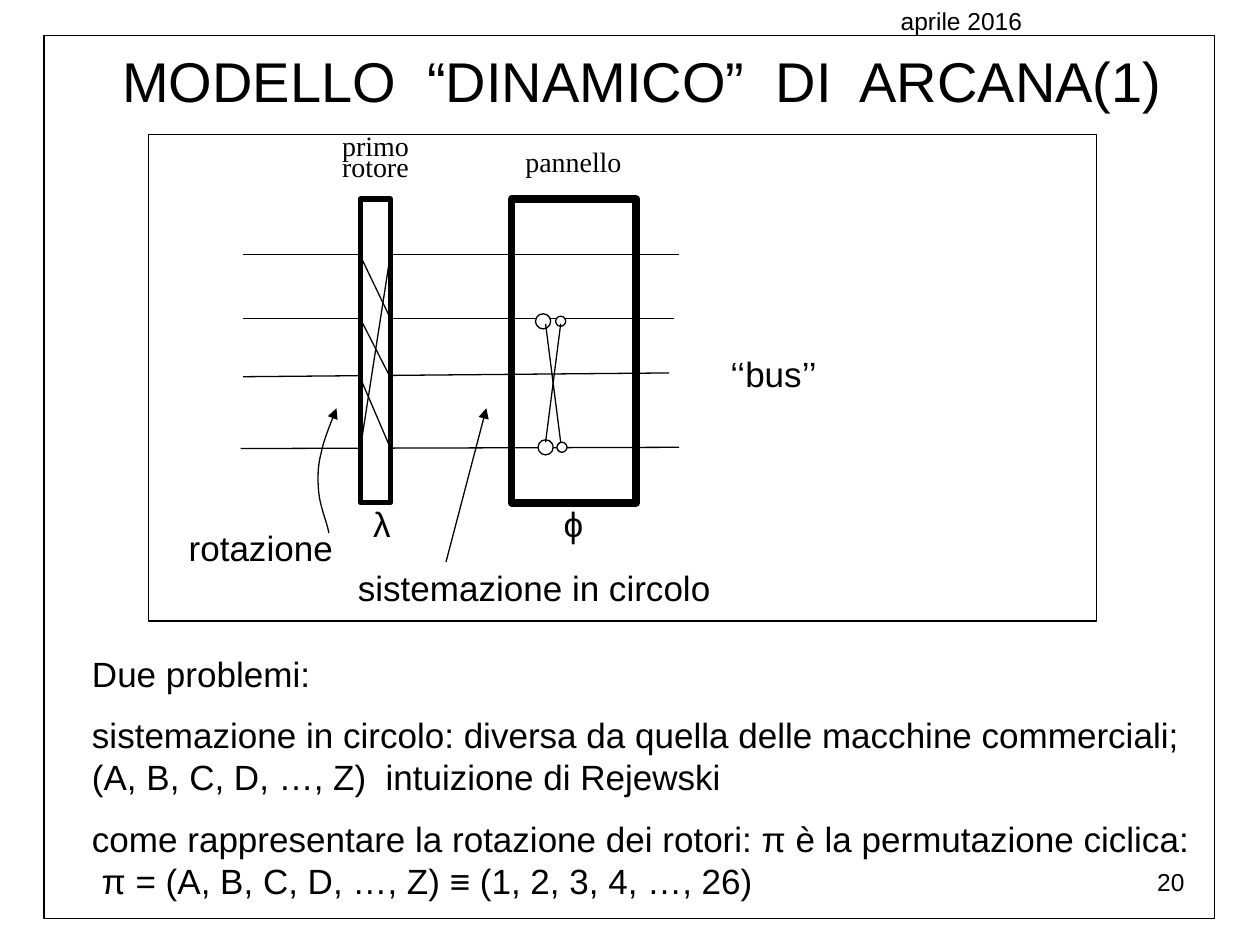
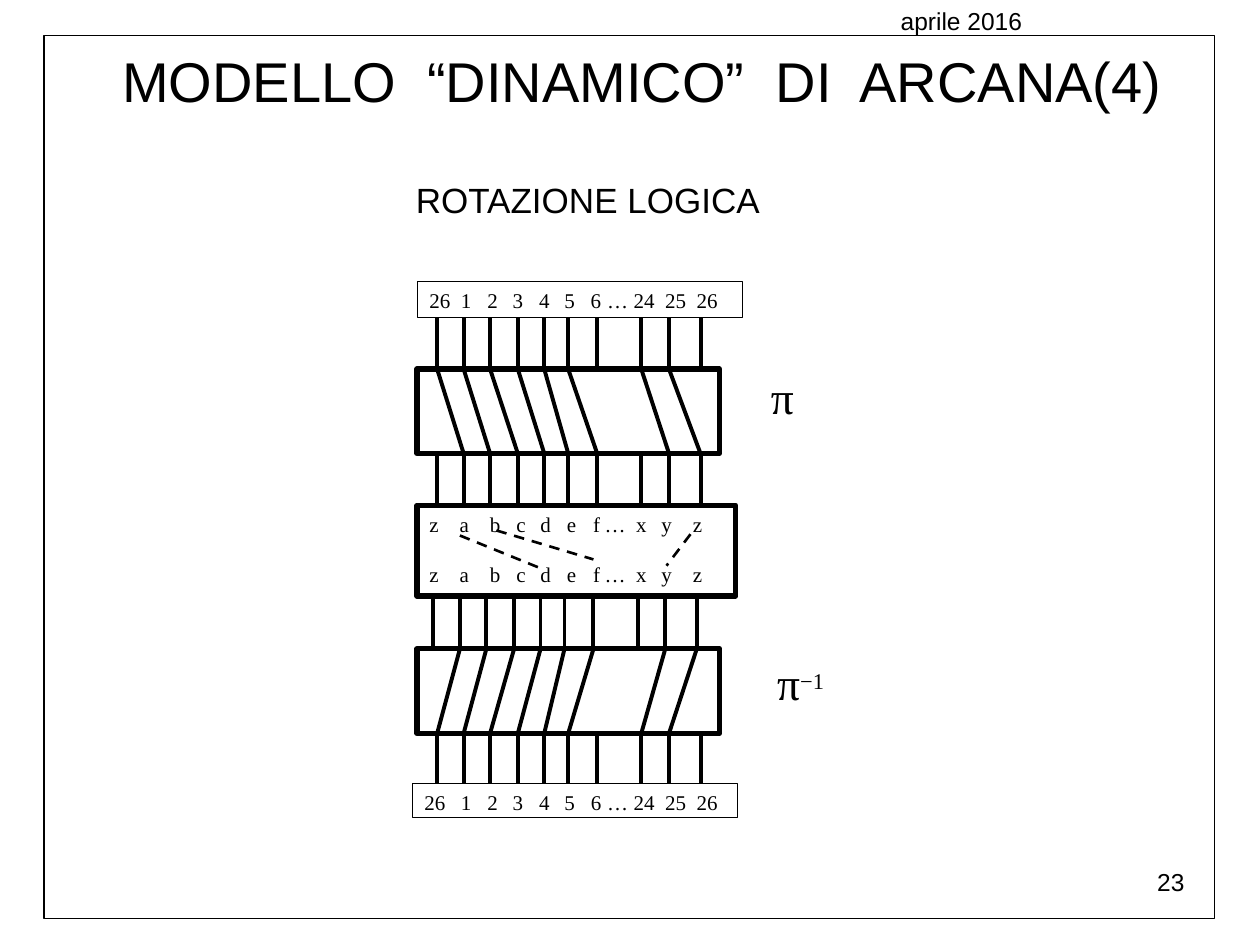
"""Build two slides on the dynamic model of the Arcana machine."""
from dataclasses import dataclass
from itertools import pairwise

from lxml.etree import SubElement
from pptx import Presentation
from pptx.dml.color import RGBColor
from pptx.enum.dml import MSO_LINE
from pptx.enum.shapes import MSO_CONNECTOR, MSO_SHAPE
from pptx.enum.text import MSO_ANCHOR, MSO_AUTO_SIZE, PP_ALIGN
from pptx.oxml.ns import qn
from pptx.shapes.autoshape import Shape
from pptx.shapes.connector import Connector
from pptx.slide import Slide
from pptx.util import Emu, Pt

BLACK = RGBColor(0, 0, 0)
WHITE = RGBColor(255, 255, 255)
SANS = "Arial"
SERIF = "Times New Roman"
PX = 9144

Point = tuple[int, int]


@dataclass(frozen=True)
class Area:
    left: int
    top: int
    width: int
    height: int

    def emu(self) -> tuple[Emu, Emu, Emu, Emu]:
        return px(self.left), px(self.top), px(self.width), px(self.height)

    def side_middles(self) -> list[Point]:
        """Middles of the top, left, bottom and right sides, in connection order."""
        middle_x = self.left + self.width // 2
        middle_y = self.top + self.height // 2
        return [(middle_x, self.top), (self.left, middle_y),
                (middle_x, self.top + self.height), (self.left + self.width, middle_y)]


@dataclass(frozen=True)
class Style:
    size: int = 20
    font: str = SANS
    align: PP_ALIGN = PP_ALIGN.LEFT
    inset: bool = True
    spacing: float = 1.0
    before: int = 0


@dataclass(frozen=True)
class Label:
    text: str
    area: Area
    style: Style
    filled: bool = False


@dataclass(frozen=True)
class Box:
    area: Area
    width: float
    fill: RGBColor | None = None
    kind: MSO_SHAPE = MSO_SHAPE.RECTANGLE


FRAME = Box(Area(35, 28, 929, 701), 0.75)
TITLE_AREA = Area(55, 32, 910, 63)
TITLE = Style(32, align=PP_ALIGN.CENTER)
BODY = Style(before=11)
DATE = Label("aprile 2016", Area(705, 0, 220, 69), Style(14))
NUMBER_AREA = Area(717, 683, 233, 52)
NUMBER = Style(14, align=PP_ALIGN.RIGHT)

TIGHT = Style(inset=False)
CENTERED = Style(inset=False, align=PP_ALIGN.CENTER)
ROTOR = Box(Area(286, 158, 24, 241), 3, WHITE)
PANEL = Box(Area(406, 158, 99, 241), 4.5)
DIAGRAM = Box(Area(118, 107, 752, 386), 0.75)
BUS_WIRES = [((193, 202), (539, 202)), ((193, 299), (531, 296)),
             ((191, 356), (539, 355)), ((193, 253), (535, 253))]
PLUGS = [Area(427, 349, 12, 12), Area(442, 351, 8, 8),
         Area(425, 249, 12, 12), Area(441, 251, 8, 8)]
ROTOR_LINKS = [(203, 253), (253, 300), (300, 356), (356, 201)]
PLUG_LINKS = [((445, 257), (433, 351)), ((433, 257), (445, 351))]
DIAGRAM_LABELS = [
    Label("primo\nrotore", Area(253, 110, 90, 39),
          Style(16, SERIF, PP_ALIGN.CENTER, False, 0.65), True),
    Label("pannello", Area(417, 115, 80, 28), Style(16, SERIF, inset=False), True),
    Label("ϕ", Area(439, 399, 32, 33), CENTERED),
    Label("λ", Area(287, 399, 32, 33), CENTERED),
    Label("sistemazione in circolo", Area(284, 450, 288, 33), TIGHT),
    Label("rotazione", Area(134, 418, 146, 33), CENTERED),
    Label("‘‘bus’’", Area(541, 280, 146, 33), CENTERED),
]
ROTATION_CURVE = [(267, 324), (265, 330), (257, 348), (255, 359), (252, 370),
                  (252, 381), (253, 391), (254, 402), (260, 416), (261, 423)]
CURVE_STEPS = 10
PROBLEMS = """Due problemi:
sistemazione in circolo: diversa da quella delle macchine commerciali; (A, B, C, D, …, Z)  intuizione di Rejewski
come rappresentare la rotazione dei rotori: π è la permutazione ciclica:
 π = (A, B, C, D, …, Z) ≡ (1, 2, 3, 4, …, 26)"""

WIRE_COLUMNS = [347, 368, 389, 411, 432, 451, 474, 509, 531, 556]
ELLIPSIS_GAP = (474, 509)
SHIFT_BOX = Box(Area(331, 293, 240, 67), 3)
LETTER_BOX = Box(Area(331, 401, 253, 72), 3)
INVERSE_BOX = Box(Area(331, 515, 240, 67), 3)
LETTER_SHIFT = -3
WIRE_ROWS = [(252, 293, 0), (360, 401, 0), (473, 515, LETTER_SHIFT), (582, 622, 0)]
NUMBERS = "26 1 2 3 4 5 6 … 24 25 26".split()
LETTERS = "z a b c d e f … x y z".split()
NUMBER_TABS = [366, 387, 407, 428, 448, 469, 482, 503, 528, 553]
LETTER_TABS = [365, 389, 410, 429, 450, 471, 480, 505, 525, 550]
NUMBER_BOXES = [Box(Area(331, 223, 258, 29), 0.5), Box(Area(327, 622, 258, 27), 0.5)]
LETTER_LINKS = [((365, 425), (429, 451)), ((394, 421), (471, 444)), ((548, 424), (529, 449))]
ROW = Style(12, SERIF)
LETTER_ROWS = Style(12, SERIF, before=14)
SYMBOL = Style(26, SERIF)


def px(length: float) -> Emu:
    return Emu(round(length * PX))


def write(shape: Shape, text: str, style: Style) -> None:
    """Fill a shape with text in one style."""
    frame = shape.text_frame
    frame.text = text
    frame.word_wrap = True
    frame.auto_size = MSO_AUTO_SIZE.NONE
    frame.vertical_anchor = MSO_ANCHOR.TOP
    frame.margin_left = frame.margin_right = px(10 if style.inset else 0)
    frame.margin_top = frame.margin_bottom = px(5 if style.inset else 0)
    for index, para in enumerate(frame.paragraphs):
        para.alignment = style.align
        para.line_spacing = style.spacing
        para.space_before = Pt(style.before if index else 0)
        for span in para.runs:
            span.font.size = Pt(style.size)
            span.font.name = style.font
            span.font.color.rgb = BLACK


def add_label(page: Slide, label: Label) -> Shape:
    shape = page.shapes.add_textbox(*label.area.emu())
    if label.filled:
        shape.fill.solid()
        shape.fill.fore_color.rgb = WHITE
    write(shape, label.text, label.style)
    return shape


def outline(shape: Shape, width: float, fill: RGBColor | None) -> None:
    shape.shadow.inherit = False
    shape.line.color.rgb = BLACK
    shape.line.width = Pt(width)
    if fill is None:
        shape.fill.background()
    else:
        shape.fill.solid()
        shape.fill.fore_color.rgb = fill


def add_box(page: Slide, box: Box) -> Shape:
    shape = page.shapes.add_shape(box.kind, *box.area.emu())
    outline(shape, box.width, box.fill)
    return shape


def add_line(page: Slide, start: Point, end: Point, width: float = 0.75,
             joined: tuple[tuple[Box, Shape], ...] = ()) -> Connector:
    """Draw a line and join it to any box whose side middle it touches."""
    line = page.shapes.add_connector(
        MSO_CONNECTOR.STRAIGHT, *map(px, start), *map(px, end))
    line.line.color.rgb = BLACK
    line.line.width = Pt(width)
    SubElement(line._element.spPr, qn("a:effectLst"))
    for box, shape in joined:
        for side, middle in enumerate(box.area.side_middles()):
            if middle == start:
                line.begin_connect(shape, side)
            if middle == end:
                line.end_connect(shape, side)
    return line


def add_head(shape: Shape | Connector) -> None:
    SubElement(shape.line._get_or_add_ln(), qn("a:headEnd"), type="triangle")


def add_curve(page: Slide, controls: list[Point]) -> Shape:
    """Draw chained cubic curves through every third control point."""
    points = []
    for first in range(0, len(controls) - 1, 3):
        a, b, c, d = controls[first:first + 4]
        for step in range(1, CURVE_STEPS + 1):
            t = step / CURVE_STEPS
            u = 1 - t
            points.append(tuple(
                px(u**3 * a[k] + 3 * u * u * t * b[k] + 3 * u * t * t * c[k] + t**3 * d[k])
                for k in (0, 1)))
    builder = page.shapes.build_freeform(*map(px, controls[0]))
    builder.add_line_segments(points, close=False)
    curve = builder.convert_to_shape()
    outline(curve, 0.75, None)
    return curve


def write_columns(shape: Shape, area: Area, rows: list[list[str]],
                  columns: list[int], style: Style) -> None:
    """Write rows whose cells are aligned on tab stops."""
    write(shape, "\n".join("\t".join(row) for row in rows), style)
    for para in shape.text_frame.paragraphs:
        stops = SubElement(para._p.get_or_add_pPr(), qn("a:tabLst"))
        for column in columns:
            SubElement(stops, qn("a:tab"), pos=str(px(column - area.left - 10)), algn="l")


def start_page(deck: Presentation, part: int, number: int, body: str, body_area: Area) -> Slide:
    page = deck.slides.add_slide(deck.slide_layouts[1])
    add_box(page, FRAME)
    add_label(page, DATE)
    add_label(page, Label(str(number), NUMBER_AREA, NUMBER))
    title, content = page.placeholders
    title.left, title.top, title.width, title.height = TITLE_AREA.emu()
    write(title, f"MODELLO  “DINAMICO”  DI  ARCANA({part})", TITLE)
    content.left, content.top, content.width, content.height = body_area.emu()
    write(content, body, BODY)
    for para in content.text_frame.paragraphs:
        properties = para._p.get_or_add_pPr()
        properties.set("marL", "0")
        properties.set("indent", "0")
        SubElement(properties, qn("a:buNone"))
    return page


def build_bus(deck: Presentation) -> None:
    page = start_page(deck, 1, 20, PROBLEMS, Area(63, 513, 906, 210))
    page.placeholders[1].text_frame.paragraphs[-1].space_before = Pt(0)
    for start, end in BUS_WIRES:
        add_line(page, start, end)
    add_box(page, PANEL)
    for plug in PLUGS:
        add_box(page, Box(plug, 0.75, WHITE, MSO_SHAPE.OVAL))
    for label in DIAGRAM_LABELS:
        add_label(page, label)
    add_box(page, ROTOR)
    for entry, leave in ROTOR_LINKS:
        add_line(page, (286, entry), (310, leave))
    add_box(page, DIAGRAM)
    for start, end in PLUG_LINKS:
        add_line(page, start, end)
    add_head(add_curve(page, ROTATION_CURVE))
    add_head(add_line(page, (386, 324), (354, 446)))


def build_rotation(deck: Presentation) -> None:
    page = start_page(deck, 4, 23, "ROTAZIONE LOGICA", Area(320, 137, 314, 44))
    letters = add_box(page, LETTER_BOX)
    write_columns(letters, LETTER_BOX.area, [LETTERS, LETTERS], LETTER_TABS, LETTER_ROWS)
    for box in NUMBER_BOXES:
        write_columns(add_box(page, box), box.area, [NUMBERS], NUMBER_TABS, ROW)
    joined = tuple((box, add_box(page, box)) for box in (SHIFT_BOX, INVERSE_BOX))
    for top, bottom, shift in WIRE_ROWS:
        for column in WIRE_COLUMNS:
            add_line(page, (column + shift, top), (column + shift, bottom), 2.25, joined)
    for column, following in pairwise(WIRE_COLUMNS):
        if (column, following) != ELLIPSIS_GAP:
            add_line(page, (column, 293), (following, 360), 2.25, joined)
            add_line(page, (following + LETTER_SHIFT, 515), (column, 582), 2.25, joined)
    for start, end in LETTER_LINKS:
        add_line(page, start, end, 1.5).line.dash_style = MSO_LINE.DASH
    add_label(page, Label("π", Area(602, 288, 79, 55), SYMBOL, True))
    inverse = add_label(page, Label("π", Area(607, 515, 79, 55), SYMBOL, True))
    exponent = inverse.text_frame.paragraphs[0].add_run()
    exponent.text = "−1"
    exponent.font.size = Pt(22)
    exponent.font.name = SERIF
    exponent.font.color.rgb = BLACK
    exponent._r.get_or_add_rPr().set("baseline", "30000")


def main() -> None:
    deck = Presentation()
    deck.slide_width, deck.slide_height = px(1000), px(750)
    build_bus(deck)
    build_rotation(deck)
    deck.save("out.pptx")


if __name__ == "__main__":
    main()
